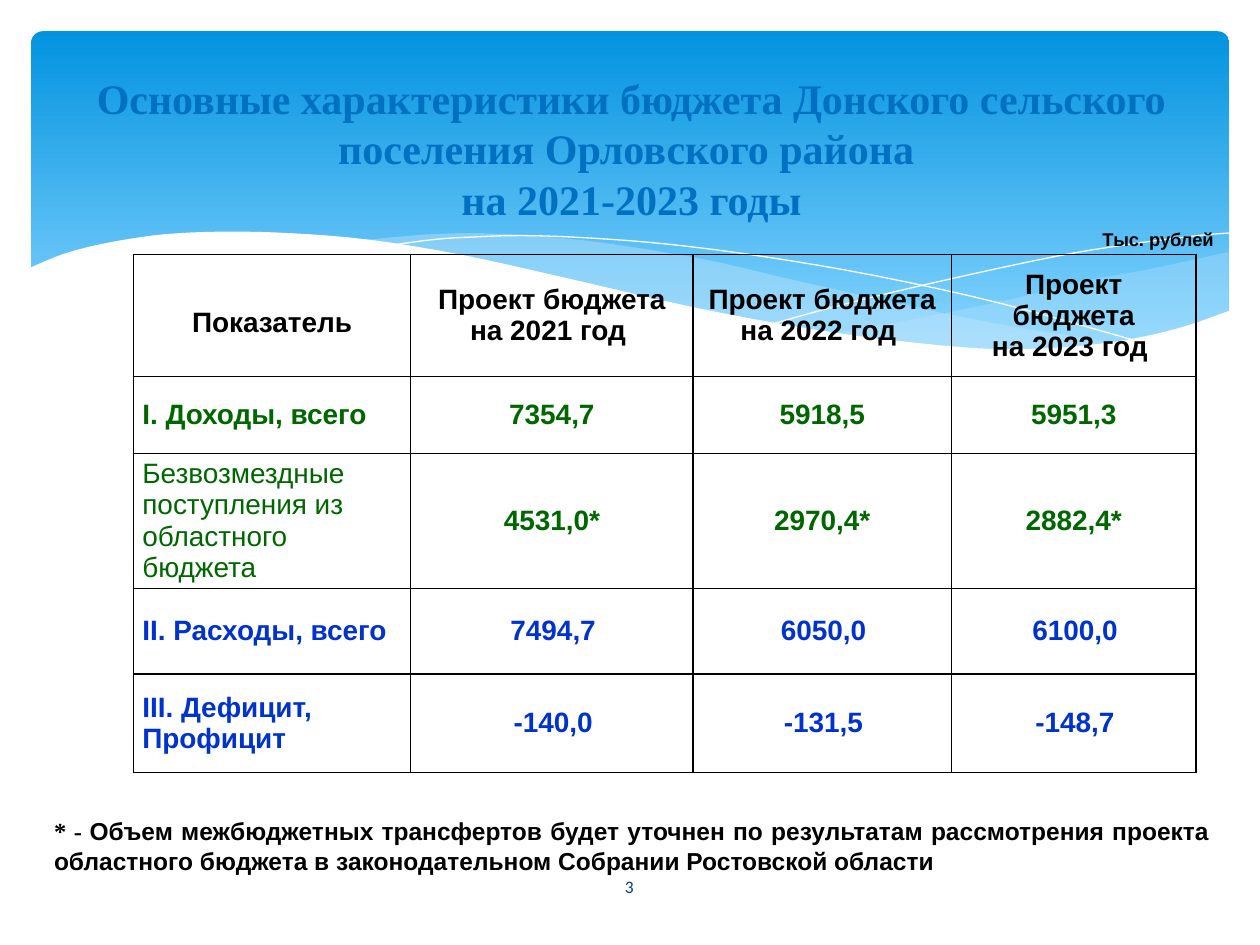
from lxml.etree import SubElement
from pptx import Presentation
from pptx.dml.color import RGBColor
from pptx.enum.shapes import MSO_SHAPE
from pptx.enum.text import MSO_ANCHOR, PP_ALIGN
from pptx.oxml import parse_xml
from pptx.oxml.ns import nsdecls, qn
from pptx.util import Cm, Pt

MID, LEFT, RIGHT, FULL = (PP_ALIGN.CENTER, PP_ALIGN.LEFT,
                          PP_ALIGN.RIGHT, PP_ALIGN.JUSTIFY)
BLACK, WHITE, GREEN, BLUE = "000000", "FFFFFF", "006600", "0033CC"
PALE = "C6E7FC"

# Wave outlines, in centimetres
RIGHT_WAVE = [
    [(24.77, 5.08), (23.01, 5.46), (21.87, 5.66), (20.45, 6.02),
     (17.93, 6.53), (16.79, 6.73)],
    [(16.79, 6.73), (18.26, 6.91), (19.53, 7.01), (20.68, 7.06),
     (21.69, 7.02), (22.58, 6.91), (23.39, 6.73), (24.1, 6.53),
     (24.77, 6.27)]]
LONG_WAVE = [
    [(22.68, 6.93), (20.5, 6.6), (18.82, 6.27), (15.98, 5.64),
     (14.45, 5.28), (13.06, 5.03), (11.81, 4.85), (10.67, 4.75),
     (9.65, 4.7), (8.74, 4.72), (7.95, 4.78), (7.26, 4.85)],
    [(7.26, 4.85), (8.69, 5.05), (10.26, 5.36), (11.4, 5.64),
     (13.46, 6.1), (15.27, 6.48), (16.89, 6.76), (18.34, 6.94),
     (19.63, 7.04), (20.78, 7.06), (21.79, 7.03), (22.68, 6.93)]]
FALL_LINE = [
    [(7.85, 4.95), (8.74, 4.83), (9.5, 4.78), (10.57, 4.75),
     (11.91, 4.8), (13.53, 4.93), (15.44, 5.18), (17.65, 5.56),
     (20.19, 6.12), (23.04, 6.91)]]
RISE_LINE = [
    [(15.57, 6.53), (17.07, 6.12), (19, 5.66), (21.23, 5.18),
     (22.73, 4.93), (24.16, 4.75), (24.77, 4.7)]]
WHITE_WAVE = [
    [(24.82, 6.25), (23.88, 6.58), (22.83, 6.83), (21.59, 6.99),
     (20.14, 7.04), (18.44, 6.91), (16.46, 6.65), (14.1, 6.22),
     (11.35, 5.59), (9.27, 5.13), (7.42, 4.83), (5.84, 4.7),
     (4.5, 4.67), (3.35, 4.72), (2.41, 4.85), (1.7, 5), (1.17, 5.16),
     (0.58, 5.41)],
    [(0.58, 8.36), (24.82, 8.36)]]

COLS = [5.59, 5.69, 5.21, 4.93]
ROWS = [2.46, 1.55, 2.72, 1.73, 1.98]
HEAD = ["Показатель"] + [f"Проект бюджета\nна {year} год "
                         for year in (2021, 2022, 2023)]
# Texts, colour, bold label, indent of the figures
BODY = [
    (["I. Доходы, всего", "7354,7", "5918,5", "5951,3"],
     GREEN, True, -0.18),
    (["Безвозмездные поступления из областного бюджета",
      "4531,0*", "2970,4*", "2882,4*"], GREEN, False, -0.18),
    (["II. Расходы, всего", "7494,7", "6050,0", "6100,0"],
     BLUE, True, 0.05),
    (["III. Дефицит, Профицит", "-140,0", "-131,5", "-148,7"],
     BLUE, True, 0.05),
]


def paint(code):
    return RGBColor.from_string(code)


def smooth(knots, steps=4):
    """Sample a Catmull-Rom curve that runs through the knots."""
    if len(knots) < 3:
        return knots
    ends = [knots[0], *knots, knots[-1]]
    out = [knots[0]]
    for a, b, c, d in zip(ends, ends[1:], ends[2:], ends[3:]):
        for step in range(1, steps + 1):
            t = step / steps
            out.append(tuple(
                q + t / 2 * (r - p + t * (2 * p - 5 * q + 4 * r - s
                                          + t * (3 * (q - r) + s - p)))
                for p, q, r, s in zip(a, b, c, d)))
    return out


class Deck:
    def __init__(self):
        self.prs = Presentation()
        self.prs.slide_width, self.prs.slide_height = Cm(25.4), Cm(19.05)
        self.slide = self.prs.slides.add_slide(self.prs.slide_layouts[6])
        self.shapes = self.slide.shapes

    def style(self, para, size, code, bold=True, font="Arial", align=MID):
        para.alignment = align
        for run in para.runs:
            run.font.size, run.font.bold, run.font.name = Pt(size), bold, font
            run.font.color.rgb = paint(code)

    def text(self, box, words, size, code, anchor=MSO_ANCHOR.TOP, **look):
        frame = self.shapes.add_textbox(*map(Cm, box)).text_frame
        frame.word_wrap = True
        frame.vertical_anchor = anchor
        frame.text = words
        for para in frame.paragraphs:
            self.style(para, size, code, **look)
        return frame.paragraphs[0]

    def panel(self, box, top, base):
        """Draw the rounded panel that fades from top to base colour."""
        shape = self.shapes.add_shape(MSO_SHAPE.ROUNDED_RECTANGLE,
                                      *map(Cm, box))
        shape.adjustments[0] = 0.034
        shape.shadow.inherit = False
        shape.line.fill.background()
        shape.fill.gradient()
        shape.fill.gradient_angle = 270
        for stop, code, place in zip(shape.fill.gradient_stops,
                                     (top, base), (0, 0.9)):
            stop.color.rgb, stop.position = paint(code), place

    def wave(self, curves, fill=None, alpha=100, line=None):
        points = [(Cm(x), Cm(y)) for curve in curves for x, y in smooth(curve)]
        pen = self.shapes.build_freeform(*points[0])
        pen.add_line_segments(points[1:], close=fill is not None)
        shape = pen.convert_to_shape()
        shape.shadow.inherit = False
        if fill:
            shape.fill.solid()
            shape.fill.fore_color.rgb = paint(fill)
            color = shape.fill._xPr.find(".//" + qn("a:srgbClr"))
            SubElement(color, qn("a:alpha"), val=str(alpha * 1000))
        else:
            shape.fill.background()
        if line:
            shape.line.color.rgb, shape.line.width = paint(line), 0
        else:
            shape.line.fill.background()

    def cell(self, cell, words, code, bold=True, align=MID, indent=0):
        cell.text = words
        cell.vertical_anchor = MSO_ANCHOR.MIDDLE
        cell.margin_left = cell.margin_right = Cm(0.18)
        cell.margin_top = cell.margin_bottom = 0
        cell.fill.background()
        for para in cell.text_frame.paragraphs:
            self.style(para, 16, code, bold, align=align)
            para._p.get_or_add_pPr().set("indent", str(Cm(indent)))
        props = cell._tc.get_or_add_tcPr()
        for place, side in enumerate("LRTB"):
            props.insert(place, parse_xml(
                f'<a:ln{side} {nsdecls("a")} w="12700"><a:solidFill>'
                f'<a:srgbClr val="{BLACK}"/></a:solidFill></a:ln{side}>'))

    def table(self, left, top):
        frame = self.shapes.add_table(len(ROWS), len(COLS), Cm(left), Cm(top),
                                      Cm(sum(COLS)), Cm(sum(ROWS)))
        grid = frame.table
        grid.first_row = grid.horz_banding = False
        for col, width in zip(grid.columns, COLS):
            col.width = Cm(width)
        for row, height in zip(grid.rows, ROWS):
            row.height = Cm(height)
        for col, words in enumerate(HEAD):
            self.cell(grid.cell(0, col), words, BLACK)
        grid.cell(0, 0).text_frame.paragraphs[0].line_spacing = 1.5
        for row, (texts, code, bold, indent) in enumerate(BODY, 1):
            self.cell(grid.cell(row, 0), texts[0], code, bold, LEFT)
            for col, words in enumerate(texts[1:], 1):
                self.cell(grid.cell(row, col), words, code, indent=indent)


def main():
    deck = Deck()
    deck.panel((0.63, 0.63, 24.15, 6.86), "0293E0", "83D3FE")
    deck.wave(RIGHT_WAVE, PALE, 29)
    deck.wave(LONG_WAVE, PALE, 40)
    deck.wave(FALL_LINE, line=WHITE)
    deck.wave(RISE_LINE, line=WHITE)
    deck.wave(WHITE_WAVE, WHITE)
    deck.text((11.07, 17.37, 3.23, 1.02), "3", 10, "073E87",
              MSO_ANCHOR.MIDDLE, bold=False, font="Calibri")
    deck.text((1.3, 1.88, 22.86, 2.21),
              "Основные характеристики бюджета Донского сельского поселения "
              "Орловского района \vна 2021-2023 годы", 24, "0070C0",
              MSO_ANCHOR.MIDDLE, font="Times New Roman")
    deck.table(2.69, 5.13)
    deck.text((21.11, 4.47, 3.61, 0.71), "Тыс. рублей", 10.5, BLACK,
              align=RIGHT)
    note = deck.text((0.84, 16.33, 23.8, 1.45), "* - ", 14, BLACK)
    note.add_run().text = (
        "Объем межбюджетных трансфертов будет уточнен по результатам "
        "рассмотрения проекта областного бюджета в законодательном "
        "Собрании Ростовской области")
    deck.style(note, 14, BLACK, align=FULL)
    note.runs[0].font.name = "Times New Roman"
    deck.prs.save("out.pptx")


if __name__ == "__main__":
    main()
